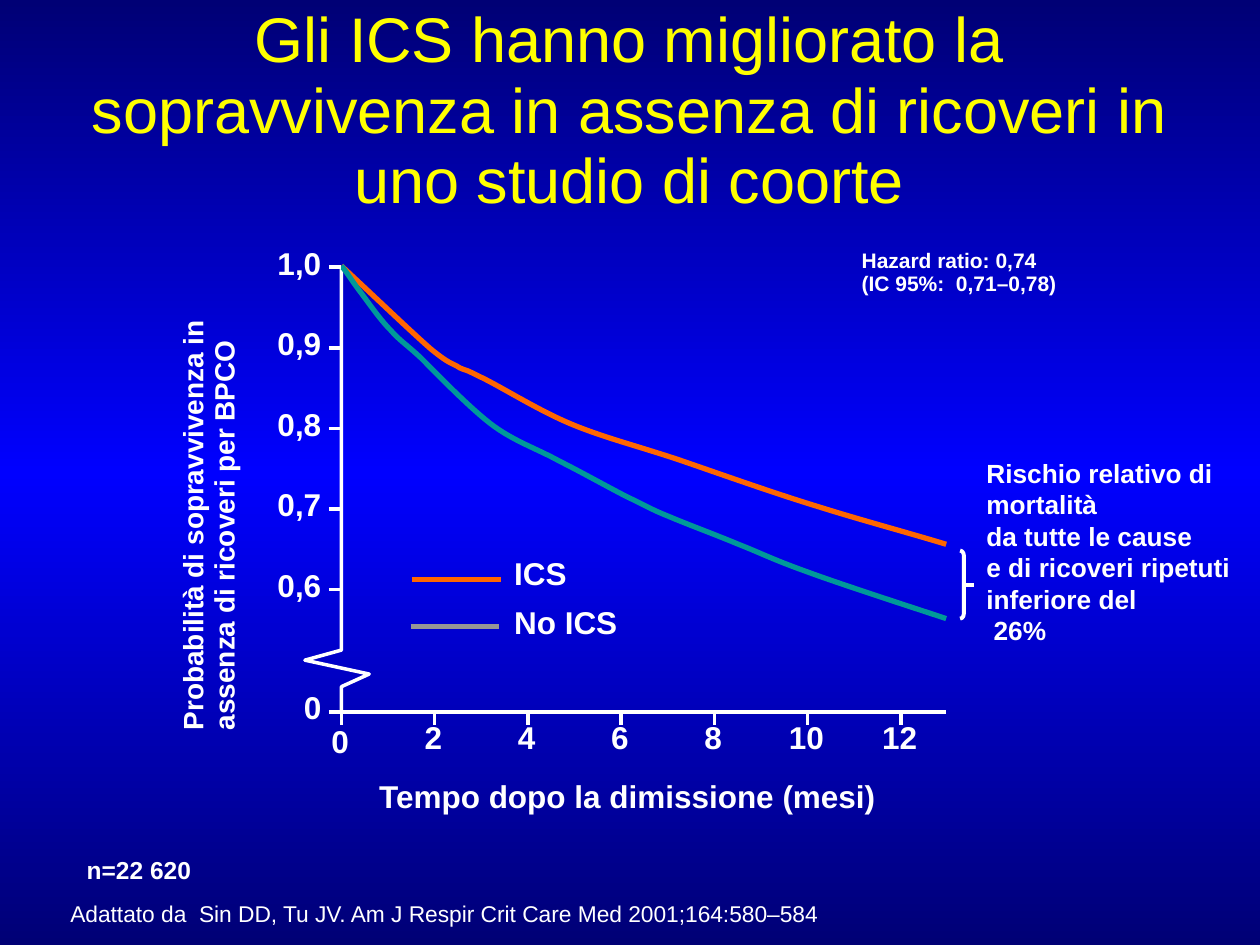
from copy import deepcopy

from lxml import etree
from pptx import Presentation
from pptx import util as u
from pptx.dml.color import RGBColor
from pptx.enum import shapes, text
from pptx.oxml.ns import qn

HUES = {"white": "FFFFFF", "title": "FFFF00", "ics": "FF6600",
        "none": "009999", "key": "969696", "dark": "000075", "mid": "0000FF"}
LEFT, RIGHT, TOP, BASE = 2.71, 7.51, 2.12, 5.65
ICS = [(2.71, 2.11), (2.99, 2.37), (3.26, 2.63), (3.42, 2.77),
       (3.58, 2.9), (3.59, 2.88), (3.65, 2.92),
       (3.72, 2.95), (3.67, 2.92), (3.81, 2.99),
       (3.96, 3.06), (4.26, 3.25), (4.52, 3.36),
       (4.78, 3.47), (5.06, 3.54), (5.39, 3.65),
       (5.71, 3.76), (6.13, 3.91), (6.49, 4.02),
       (6.84, 4.13), (7.18, 4.22), (7.51, 4.32)]
NONE = [(2.71, 2.11), (2.76, 2.17), (2.8, 2.24), (2.87, 2.33),
        (2.93, 2.41), (3.02, 2.54), (3.1, 2.62),
        (3.18, 2.71), (3.21, 2.72), (3.34, 2.84),
        (3.47, 2.97), (3.71, 3.22), (3.89, 3.36),
        (4.07, 3.5), (4.26, 3.56), (4.44, 3.66),
        (4.62, 3.75), (4.85, 3.88), (4.99, 3.95),
        (5.14, 4.02), (5.16, 4.04), (5.31, 4.1),
        (5.45, 4.16), (5.67, 4.24), (5.86, 4.32),
        (6.04, 4.39), (6.13, 4.44), (6.41, 4.54),
        (6.68, 4.64), (7.33, 4.85), (7.51, 4.91)]


class Board:
    """Hold the style and the current slide."""

    font = "Arial"

    def __init__(self, slide):
        """Keep the slide to draw on."""
        self.slide = slide
        self.shapes = slide.shapes

    def rgb(self, hue):
        """Return a named colour."""
        return RGBColor.from_string(HUES[hue])

    def back(self, hues):
        """Fill the background with an even vertical gradient."""
        fill = self.slide.background.fill
        fill.gradient()
        fill.gradient_angle = 90
        stops = next(self.slide.element.iter(qn("a:gsLst")))
        stops.insert(1, deepcopy(stops[0]))
        for i, (stop, hue) in enumerate(zip(fill.gradient_stops, hues)):
            stop.color.rgb = self.rgb(hue)
            stop.position = i / (len(hues) - 1)

    def style(self, frame, words, size, hue="white", bold=True, align="LEFT",
              space=0, lead=0.93):
        """Put words in a frame and format them."""
        frame.text = words
        for para in frame.paragraphs:
            para.alignment = getattr(text.PP_ALIGN, align)
            para.line_spacing = lead
            para.space_before = u.Pt(space)
            for run in para.runs:
                run.font.name = self.font
                run.font.size = u.Pt(size)
                run.font.bold = bold
                run.font.color.rgb = self.rgb(hue)

    def title(self, box, words):
        """Place and format the title."""
        head = self.shapes.title
        head.left, head.top, head.width, head.height = map(u.Inches, box)
        frame = head.text_frame
        frame.auto_size = text.MSO_AUTO_SIZE.NONE
        frame.vertical_anchor = text.MSO_ANCHOR.MIDDLE
        self.style(frame, words, 36, "title", False, "CENTER")

    def label(self, box, words, size=18, pad=(0.1, 0.05), wrap=False, turn=0, **look):
        """Add a text box."""
        item = self.shapes.add_textbox(*map(u.Inches, box))
        item.rotation = turn
        frame = item.text_frame
        frame.word_wrap = wrap
        frame.auto_size = text.MSO_AUTO_SIZE.SHAPE_TO_FIT_TEXT
        frame.margin_left = frame.margin_right = u.Inches(pad[0])
        frame.margin_top = frame.margin_bottom = u.Inches(pad[1])
        self.style(frame, words, size, **look)

    def pen(self, item, hue, width):
        """Set the line of a shape."""
        item.line.color.rgb = self.rgb(hue)
        item.line.width = u.Pt(width)

    def line(self, start, end, hue="white", width=2):
        """Add a straight line."""
        item = self.shapes.add_connector(
            shapes.MSO_CONNECTOR.STRAIGHT, *map(u.Inches, start + end))
        self.pen(item, hue, width)
        etree.SubElement(item.element.spPr, qn("a:effectLst"))

    def trace(self, pts, hue="white", width=2):
        """Add an open outline and return it."""
        pts = [tuple(map(u.Inches, p)) for p in pts]
        form = self.shapes.build_freeform(*pts[0])
        form.add_line_segments(pts[1:], close=False)
        item = form.convert_to_shape()
        item.fill.background()
        item.shadow.inherit = False
        self.pen(item, hue, width)
        return item

    def curve(self, pts, hue):
        """Add a chain of cubic curves, three points to each."""
        item = self.trace(pts, hue, 3)
        legs = list(item.element.iter(qn("a:lnTo")))
        route = legs[0].getparent()
        for i in range(0, len(legs), 3):
            bend = etree.SubElement(route, qn("a:cubicBezTo"))
            for leg in legs[i:i + 3]:
                bend.append(leg[0])
                route.remove(leg)

    def bracket(self, box):
        """Add a right bracket."""
        item = self.shapes.add_shape(
            shapes.MSO_SHAPE.RIGHT_BRACKET, *map(u.Inches, box))
        item.adjustments[0] = 1.3
        item.fill.background()
        item.shadow.inherit = False
        self.pen(item, "white", 2.25)


def main():
    """Build the survival slide."""
    deck = Presentation()
    deck.slide_width, deck.slide_height = u.Inches(10), u.Inches(7.5)
    board = Board(deck.slides.add_slide(deck.slide_layouts[5]))
    board.back(("dark", "mid", "dark"))
    board.title((0.58, -0.04, 8.83, 1.86),
                "Gli ICS hanno migliorato la sopravvivenza in assenza "
                "di ricoveri in uno studio di coorte")

    slim = (0.09, 0.04)
    board.label((-0.29, 3.6, 3.95, 0.62),
                "Probabilità di sopravvivenza in assenza di ricoveri per BPCO",
                16, slim, True, 270, space=9.9)
    board.label((2.92, 6.15, 4.17, 0.39), "Tempo dopo la dimissione (mesi)",
                pad=slim, wrap=True, space=11.1)

    board.trace([(LEFT, TOP), (LEFT, 5.16), (2.42, 5.24), (2.93, 5.35),
                 (LEFT, 5.45), (LEFT, BASE)])
    board.line((RIGHT, BASE), (LEFT, BASE))
    board.curve(ICS, "ics")
    board.curve(NONE, "none")

    marks = [(TOP + 0.64 * i, f"{1 - i / 10:.1f}".replace(".", ",")) for i in range(5)]
    for y, words in marks + [(BASE, "0")]:
        board.line((LEFT - 0.1, y), (LEFT, y))
        board.label((2.2, y - 0.16, 0.35, 0.3), words, pad=(0, 0), align="RIGHT")
    for i in range(7):
        x = LEFT + 0.74 * i
        wide = 0.48 if i > 4 else 0.34
        board.line((x, BASE + 0.1), (x, BASE))
        board.label((x - 0.01 - wide / 2, 5.68 if i else 5.71, wide, 0.4),
                    str(2 * i), align="CENTER")

    board.line((3.27, 4.6), (3.98, 4.6), "ics", 3)
    board.label((3.99, 4.38, 0.64, 0.39), "ICS", pad=slim)
    board.line((3.26, 4.97), (3.96, 4.97), "key", 3)
    board.label((3.99, 4.77, 1.59, 0.39), "No ICS", pad=slim, wrap=True, space=11.1)

    board.bracket((7.62, 4.37, 0.03, 0.54))
    board.line((7.66, 4.64), (7.73, 4.64), width=2.25)
    board.label((7.73, 3.58, 2.41, 1.63),
                "Rischio relativo di mortalità\nda tutte le cause\n"
                "e di ricoveri ripetuti inferiore del\n 26%", 15, wrap=True, lead=1.0)
    board.label((6.74, 1.93, 1.75, 0.5),
                "Hazard ratio: 0,74\v(IC 95%:  0,71–0,78)", 12)
    board.label((0.59, 6.76, 1.03, 0.33), "n=22 620", 14)
    board.label((0.46, 7.11, 7.06, 0.32),
                "Adattato da  Sin DD, Tu JV. Am J Respir Crit Care Med "
                "2001;164:580–584", 13, wrap=True, bold=False, space=8)
    deck.save("out.pptx")


if __name__ == "__main__":
    main()
